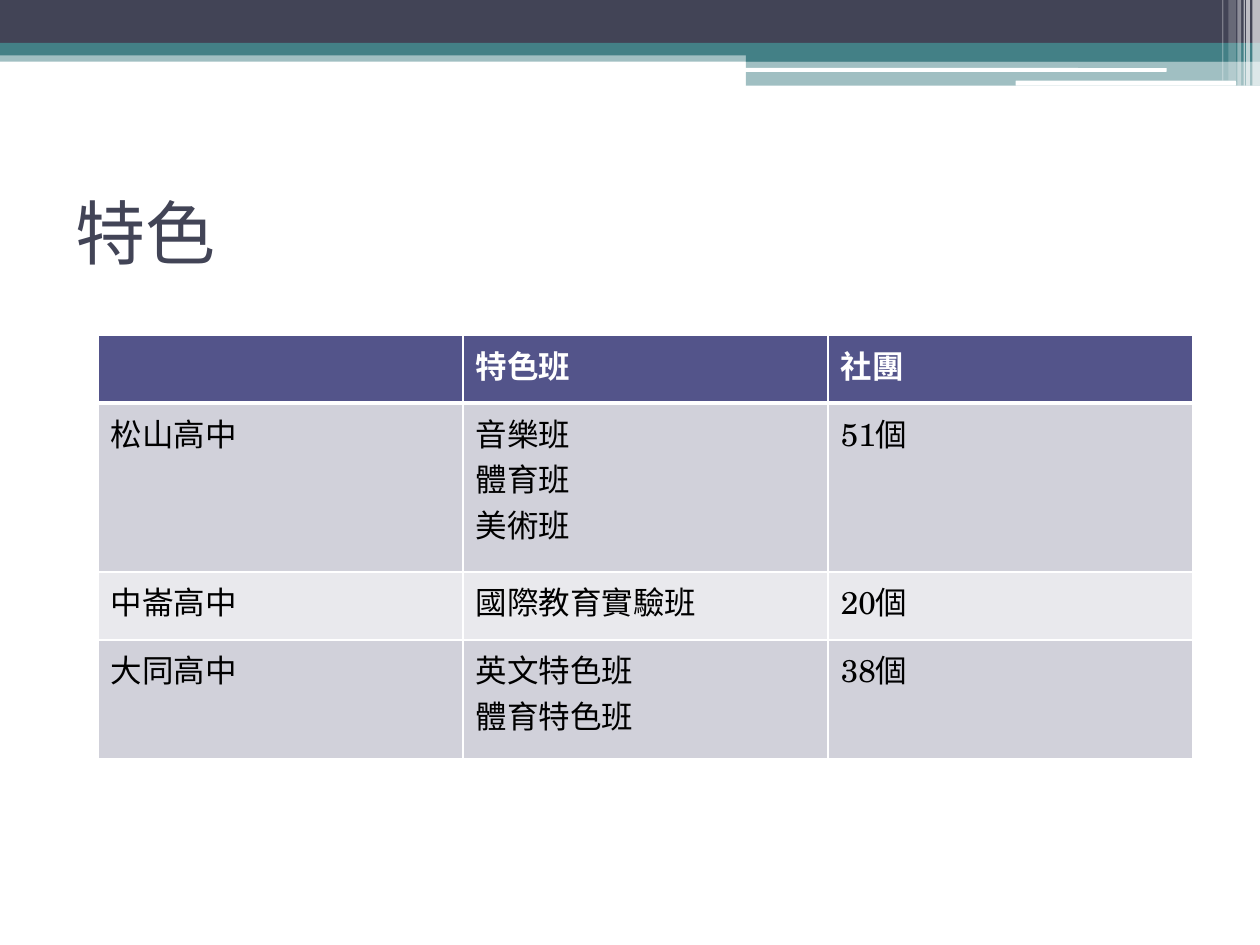
from lxml.etree import SubElement
from pptx import Presentation
from pptx.dml.color import RGBColor
from pptx.enum.shapes import MSO_SHAPE as Shape
from pptx.enum.text import MSO_ANCHOR as Anchor
from pptx.oxml import parse_xml
from pptx.oxml.ns import nsdecls, qn
from pptx.util import Inches, Pt

COLUMNS, ROWS = 1000, 750
WIDTH, HEIGHT = Inches(10), Inches(7.5)

WHITE = RGBColor(0xFF, 0xFF, 0xFF)
BLACK = RGBColor(0x00, 0x00, 0x00)
SLATE = RGBColor(0x42, 0x44, 0x56)
TEAL = RGBColor(0x43, 0x80, 0x86)
INDIGO = RGBColor(0x53, 0x54, 0x8A)
BAND_DARK = RGBColor(0xD1, 0xD1, 0xDA)
BAND_LIGHT = RGBColor(0xE9, 0xE9, 0xED)

TITLE_FORMAT = {"name": "Lato", "size": Pt(40), "bold": False}
HEADER_FORMAT = {"name": "TeX Gyre Schola", "size": Pt(18), "bold": True}
BODY_FORMAT = {**HEADER_FORMAT, "bold": False}

BANNER_BARS = [
    ((0, 40, 1000, 9), TEAL, 50),
    ((0, 0, 1000, 34), SLATE, 100),
    ((0, 34, 1000, 10), TEAL, 100),
    ((592, 39, 408, 10), TEAL, 100),
    ((592, 48, 408, 20), TEAL, 50),
]
BANNER_SLITS = [(591, 54, 335, 3), (806, 64, 175, 4)]
EDGE_STRIPES = [
    (994, 6, 68, 65),
    (989, 3, 68, 65),
    (987, 1, 68, 60),
    (982, 3, 68, 40),
    (975, 6, 64, 20),
    (970, 1, 64, 30),
]

SCHOOL_ROWS = [
    ("", "特色班", "社團"),
    ("松山高中", "音樂班\n體育班\n美術班", "51個"),
    ("中崙高中", "國際教育實驗班", "20個"),
    ("大同高中", "英文特色班\n體育特色班", "38個"),
]
ROW_HEIGHTS = [54, 134, 54, 94]
ROW_FILLS = [INDIGO, BAND_DARK, BAND_LIGHT, BAND_DARK]


def grid_box(left, top, width, height):
    """Turn grid columns and rows into slide lengths."""
    return (WIDTH * left // COLUMNS, HEIGHT * top // ROWS,
            WIDTH * width // COLUMNS, HEIGHT * height // ROWS)


def add_bar(slide, box, color, opacity=100, kind=Shape.RECTANGLE):
    """Add a borderless bar with an opacity in percent."""
    shape = slide.shapes.add_shape(kind, *grid_box(*box))
    shape.shadow.inherit = False
    shape.line.fill.background()
    shape.fill.solid()
    shape.fill.fore_color.rgb = color
    if opacity < 100:
        color_element = shape.fill._xPr.find(qn("a:solidFill"))[0]
        SubElement(color_element, qn("a:alpha"), val=str(opacity * 1000))


def add_banner(slide):
    """Draw the layered band across the top of the slide."""
    for box, color, opacity in BANNER_BARS:
        add_bar(slide, box, color, opacity)
    for box in BANNER_SLITS:
        add_bar(slide, box, WHITE, kind=Shape.ROUNDED_RECTANGLE)
    for left, width, height, opacity in EDGE_STRIPES:
        add_bar(slide, (left, 0, width, height), WHITE, opacity)


def write_text(text_frame, text, color, font_format):
    """Write one paragraph per line with the given format."""
    text_frame.text = text
    for paragraph in text_frame.paragraphs:
        for name, value in font_format.items():
            setattr(paragraph.font, name, value)
        for run in paragraph.runs:
            for name, value in font_format.items():
                setattr(run.font, name, value)
            run.font.color.rgb = color


def add_title(slide, text):
    """Add the vertically centred slide title."""
    box = slide.shapes.add_textbox(*grid_box(50, 125, 900, 117))
    box.text_frame.word_wrap = True
    box.text_frame.vertical_anchor = Anchor.MIDDLE
    write_text(box.text_frame, text, SLATE, TITLE_FORMAT)


def set_borders(cell, widths):
    """Give a cell white borders, in left, right, top, bottom order."""
    properties = cell._tc.get_or_add_tcPr()
    for index, (side, width) in enumerate(zip("LRTB", widths)):
        properties.insert(index, parse_xml(
            f'<a:ln{side} {nsdecls("a")} w="{Pt(width)}"><a:solidFill>'
            f'<a:srgbClr val="{WHITE}"/></a:solidFill></a:ln{side}>'))


def add_school_table(slide):
    """Add the table of special classes and clubs by school."""
    box = grid_box(78, 266, 869, sum(ROW_HEIGHTS))
    table = slide.shapes.add_table(
        len(SCHOOL_ROWS), len(SCHOOL_ROWS[0]), *box).table
    table.horz_banding = False
    for row_index, texts in enumerate(SCHOOL_ROWS):
        is_header = row_index == 0
        table.rows[row_index].height = HEIGHT * ROW_HEIGHTS[row_index] // ROWS
        for column_index, text in enumerate(texts):
            cell = table.cell(row_index, column_index)
            cell.fill.solid()
            cell.fill.fore_color.rgb = ROW_FILLS[row_index]
            set_borders(cell, (1, 1, 3 if row_index == 1 else 1,
                               3 if is_header else 1))
            write_text(cell.text_frame, text, WHITE if is_header else BLACK,
                       HEADER_FORMAT if is_header else BODY_FORMAT)


def main():
    """Build and save the slide."""
    presentation = Presentation()
    presentation.slide_width, presentation.slide_height = WIDTH, HEIGHT
    slide = presentation.slides.add_slide(presentation.slide_layouts[6])
    add_banner(slide)
    add_title(slide, "特色")
    add_school_table(slide)
    presentation.save("out.pptx")


if __name__ == "__main__":
    main()
